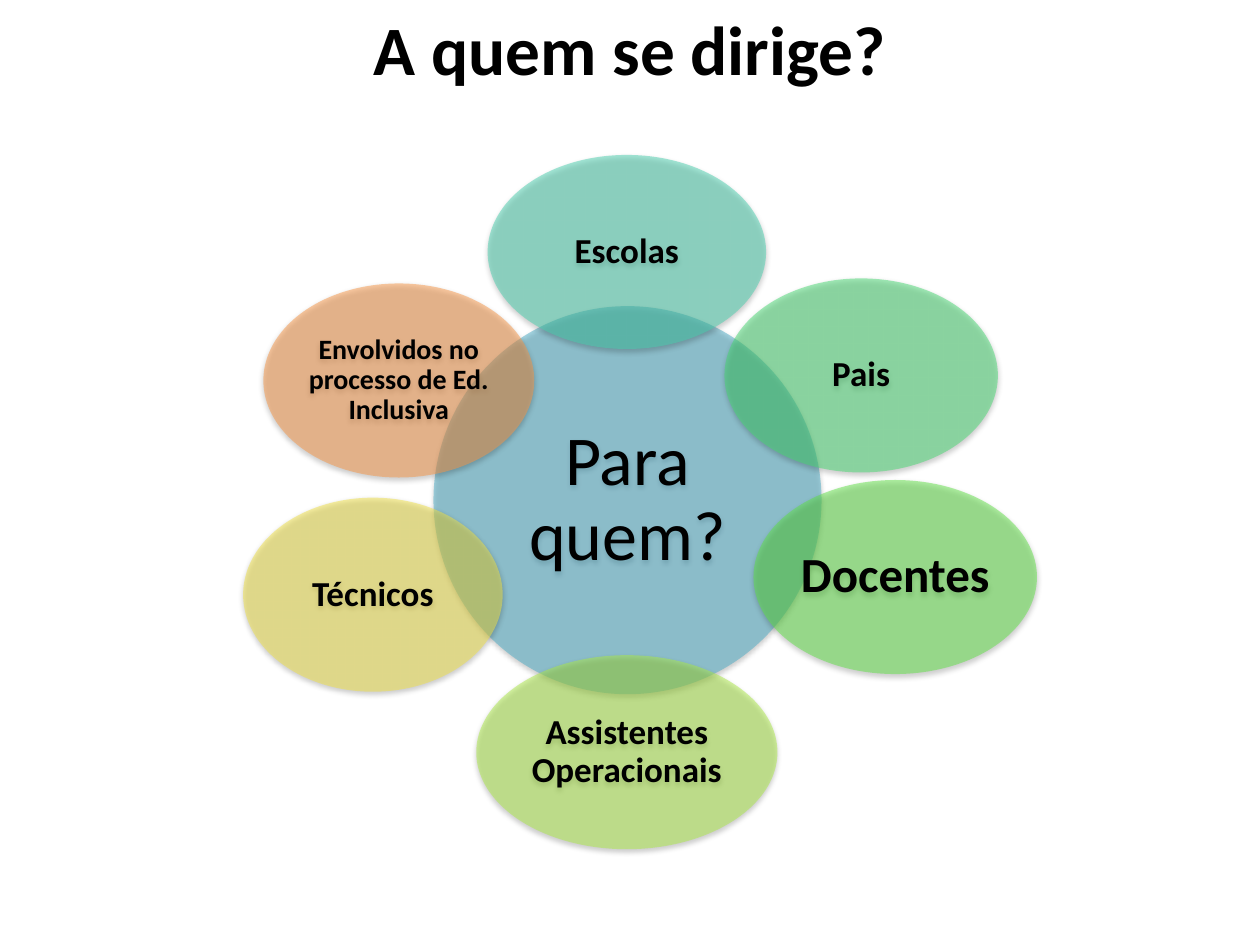
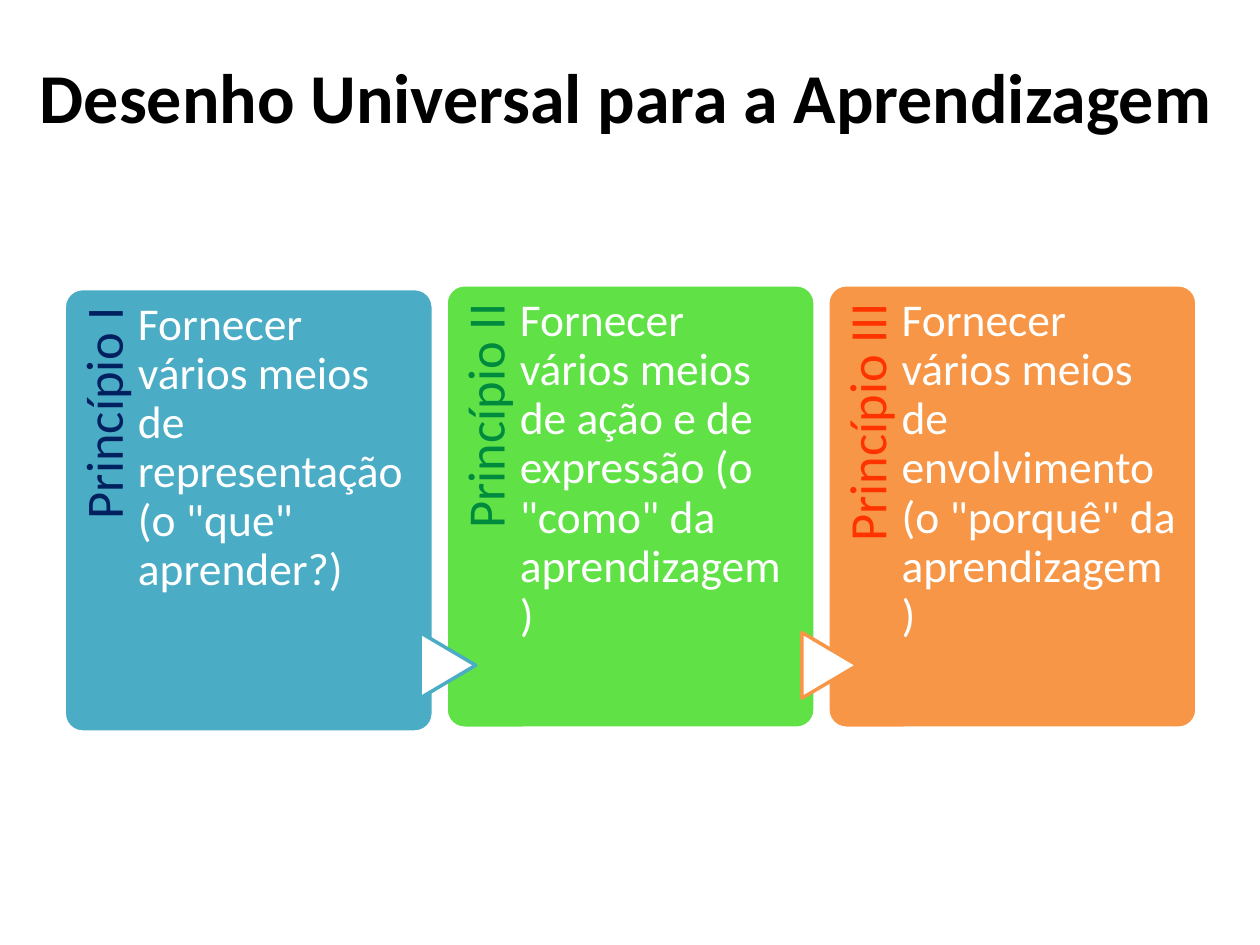
"""Build two slides: the audience flower and the three learning principles."""
from dataclasses import dataclass
from typing import NamedTuple

from lxml import etree
from pptx import Presentation
from pptx import util as u
from pptx.dml.color import RGBColor
from pptx.enum import shapes, text
from pptx.oxml.ns import qn

WIDTH, HEIGHT = u.Inches(10), u.Inches(7.5)
COLUMN, ROW = WIDTH / 100, HEIGHT / 75
FONT = "Calibri"
COLOURS = {
    "black": "000000", "white": "FFFFFF", "blue": "4BACC6", "teal": "49CFAE",
    "emerald": "47D872", "green": "60E146", "lime": "ACE946", "yellow": "F0E146",
    "orange": "F79646", "navy": "002060", "forest": "008A3E", "red": "FF3300",
}
CENTRE, RIGHT, LEFT = text.PP_ALIGN.CENTER, text.PP_ALIGN.RIGHT, text.PP_ALIGN.LEFT
TOP, MIDDLE = text.MSO_ANCHOR.TOP, text.MSO_ANCHOR.MIDDLE


class Area(NamedTuple):
    """Left, top, width and height in grid columns and rows."""
    left: float
    top: float
    width: float
    height: float

    def emu(self) -> tuple:
        """Return the area in slide units."""
        return tuple(round(length * unit) for length, unit in zip(self, (COLUMN, ROW) * 2))


class Insets(NamedTuple):
    """Text margins in inches."""
    left: float
    top: float
    right: float
    bottom: float


@dataclass(frozen=True)
class Style:
    """Format of a piece of text."""
    size: float
    colour: str = "black"
    bold: bool = False
    align: text.PP_ALIGN = CENTRE
    anchor: text.MSO_ANCHOR = MIDDLE
    insets: Insets = Insets(0.03, 0.03, 0.03, 0.03)
    spacing: float = 0.9


@dataclass(frozen=True)
class Petal:
    """An audience, placed by its centre on the grid."""
    audience: str
    colour: str
    x: float
    y: float
    width: float
    size: float = 20


@dataclass(frozen=True)
class Principle:
    """A principle card; the arrow into it is optional."""
    label: str
    statement: str
    colour: str
    label_colour: str
    top: float
    arrow_colour: str = ""


CORE = Area(34.4, 24.3, 30.8, 30.8)
PETAL_HEIGHT = 15.4
PETALS = (
    Petal("Escolas", "teal", 49.75, 20, 22.1),
    Petal("Pais", "emerald", 68.35, 29.8, 21.7),
    Petal("Docentes", "green", 71.05, 45.8, 22.5, 28),
    Petal("Assistentes Operacionais", "lime", 49.75, 59.7, 23.9),
    Petal("Técnicos", "yellow", 29.6, 47.2, 20.6),
    Petal("Envolvidos no processo de Ed. Inclusiva", "orange", 31.65, 30.2, 21.5, 16),
)
FIRST_CARD, CARD_PITCH, CARD_WIDTH, CARD_HEIGHT = 5.1, 30.3, 29.3, 35.2
PRINCIPLES = (
    Principle("Princípio I", 'Fornecer vários meios de representação (o "que" aprender?)',
              "blue", "navy", 22.9),
    Principle("Princípio II", 'Fornecer vários meios de ação e de expressão (o "como" da aprendizagem)',
              "green", "forest", 22.6, "blue"),
    Principle("Princípio III", 'Fornecer vários meios de envolvimento (o "porquê" da aprendizagem)',
              "orange", "red", 22.6, "orange"),
)
STATEMENT = Style(26, "white", align=LEFT, anchor=TOP, insets=Insets(0, 0.1, 0, 0))


def rgb(name: str) -> RGBColor:
    """Look up a palette colour."""
    return RGBColor.from_string(COLOURS[name])


def apply(target, values: dict) -> None:
    """Set each named attribute on the target."""
    for name, value in values.items():
        setattr(target, name, value)


def write(shape, words: str, style: Style) -> None:
    """Put one formatted paragraph into a shape."""
    frame = shape.text_frame
    apply(frame, {"word_wrap": True, "vertical_anchor": style.anchor})
    apply(frame, {f"margin_{side}": u.Inches(inset)
                  for side, inset in zip(Insets._fields, style.insets)})
    paragraph = frame.paragraphs[0]
    apply(paragraph, {"alignment": style.align, "line_spacing": style.spacing})
    run = paragraph.add_run()
    run.text = words
    apply(run.font, {"name": FONT, "size": u.Pt(style.size), "bold": style.bold})
    run.font.color.rgb = rgb(style.colour)


def add_text(slide, area: Area, words: str, style: Style, rotation: float = 0) -> None:
    """Add a text box."""
    box = slide.shapes.add_textbox(*area.emu())
    box.rotation = rotation
    write(box, words, style)


def add_title(slide, area: Area, words: str, size: float, anchor=MIDDLE, top_inset=0.05) -> None:
    """Add a slide title in the shared style."""
    insets = Insets(0.1, top_inset, 0.1, 0.05)
    add_text(slide, area, words, Style(size, bold=True, anchor=anchor, insets=insets, spacing=1.0))


def add_filled(slide, kind, area: Area, fill: str, outline: str = ""):
    """Add a flat preset shape with an optional two-point outline."""
    shape = slide.shapes.add_shape(kind, *area.emu())
    shape.shadow.inherit = False
    shape.fill.solid()
    shape.fill.fore_color.rgb = rgb(fill)
    if outline:
        shape.line.color.rgb = rgb(outline)
        shape.line.width = u.Pt(2)
    else:
        shape.line.fill.background()
    return shape


def add_alpha(colour, percent: int) -> None:
    """Make a colour element partly transparent."""
    etree.SubElement(colour, qn("a:alpha")).set("val", str(percent * 1000))


def add_bubble(slide, area: Area, fill: str, words: str, style: Style) -> None:
    """Add a half-transparent ellipse with a soft shadow and its text."""
    bubble = add_filled(slide, shapes.MSO_SHAPE.OVAL, area, fill)
    properties = bubble.element.spPr
    add_alpha(properties.find(f"{qn('a:solidFill')}/{qn('a:srgbClr')}"), 50)
    shadow = etree.SubElement(properties.find(qn("a:effectLst")), qn("a:outerShdw"))
    for name, value in {"blurRad": u.Pt(3.1), "dist": u.Pt(1.6), "dir": 90 * 60000,
                        "rotWithShape": 0}.items():
        shadow.set(name, str(int(value)))
    tint = etree.SubElement(shadow, qn("a:srgbClr"))
    tint.set("val", COLOURS["black"])
    add_alpha(tint, 38)
    write(bubble, words, style)


def add_principle(slide, left: float, principle: Principle) -> None:
    """Add a card with its upright label, incoming arrow and statement."""
    top = principle.top
    card = add_filled(slide, shapes.MSO_SHAPE.ROUNDED_RECTANGLE,
                      Area(left, top, CARD_WIDTH, CARD_HEIGHT), principle.colour, "white")
    card.adjustments[0] = 0.05
    label_style = Style(30, principle.label_colour, align=RIGHT, anchor=TOP,
                        insets=Insets(0, 0.11, 0.15, 0))
    add_text(slide, Area(left - 11.5, top + 11.45, 28.8, 5.9), principle.label, label_style, 270)
    if principle.arrow_colour:
        arrow = add_filled(slide, shapes.MSO_SHAPE.FLOWCHART_EXTRACT,
                           Area(left - 2.45, top + 28, 5.2, 4.4), "white", principle.arrow_colour)
        arrow.rotation = 90
    add_text(slide, Area(left + 5.85, top, 21.8, CARD_HEIGHT), principle.statement, STATEMENT)


def build_audience(slide) -> None:
    """Draw the audience flower."""
    add_bubble(slide, CORE, "blue", "Para quem?", Style(40, insets=Insets(0.06, 0.06, 0.06, 0.06)))
    for petal in PETALS:
        area = Area(petal.x - petal.width / 2, petal.y - PETAL_HEIGHT / 2, petal.width, PETAL_HEIGHT)
        add_bubble(slide, area, petal.colour, petal.audience, Style(petal.size, bold=True))
    add_title(slide, Area(5, 0.5, 90, 12.5), "A quem se dirige?", 39.6, TOP, 0)


def build_principles(slide) -> None:
    """Draw the row of principle cards."""
    add_title(slide, Area(1.2, 1.3, 96.9, 12.5), "Desenho Universal para a Aprendizagem", 40)
    for position, principle in enumerate(PRINCIPLES):
        add_principle(slide, FIRST_CARD + position * CARD_PITCH, principle)


def main() -> None:
    """Build and save the presentation."""
    deck = Presentation()
    apply(deck, {"slide_width": WIDTH, "slide_height": HEIGHT})
    for build in (build_audience, build_principles):
        build(deck.slides.add_slide(deck.slide_layouts[6]))
    deck.save("out.pptx")


if __name__ == "__main__":
    main()
